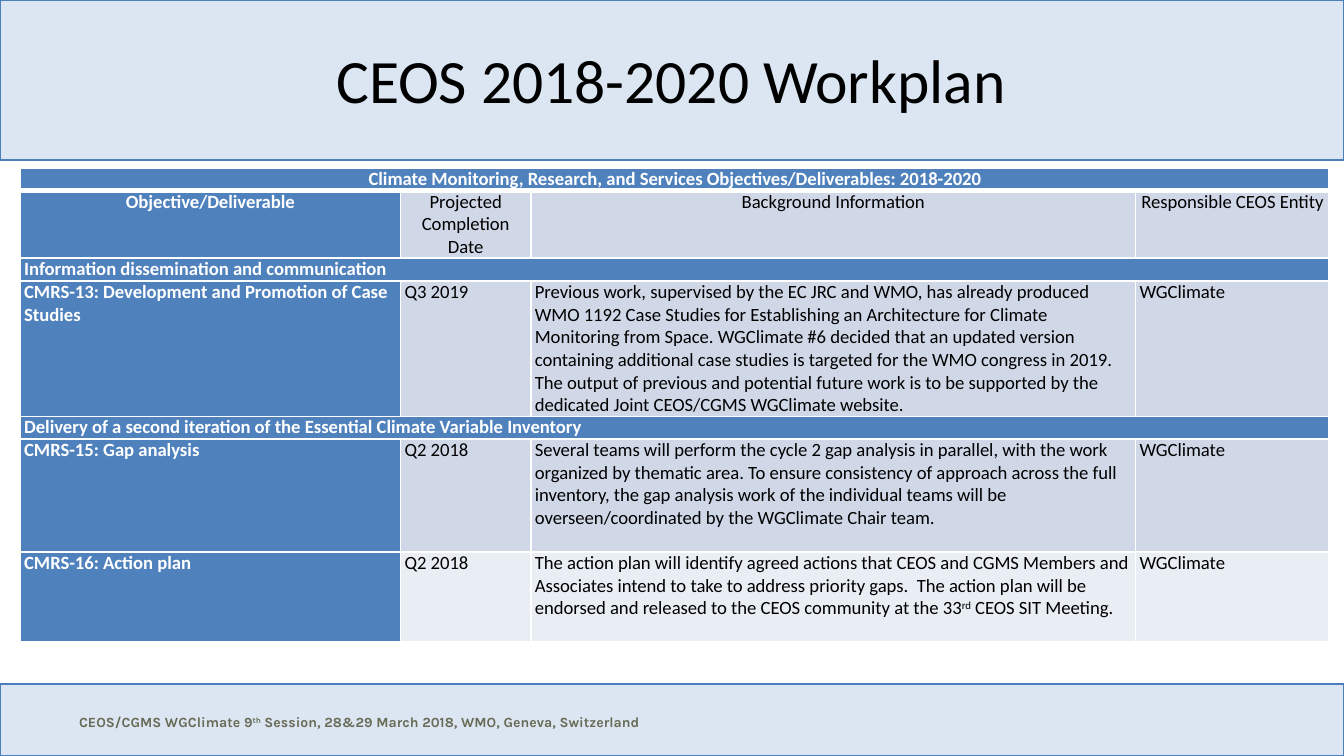
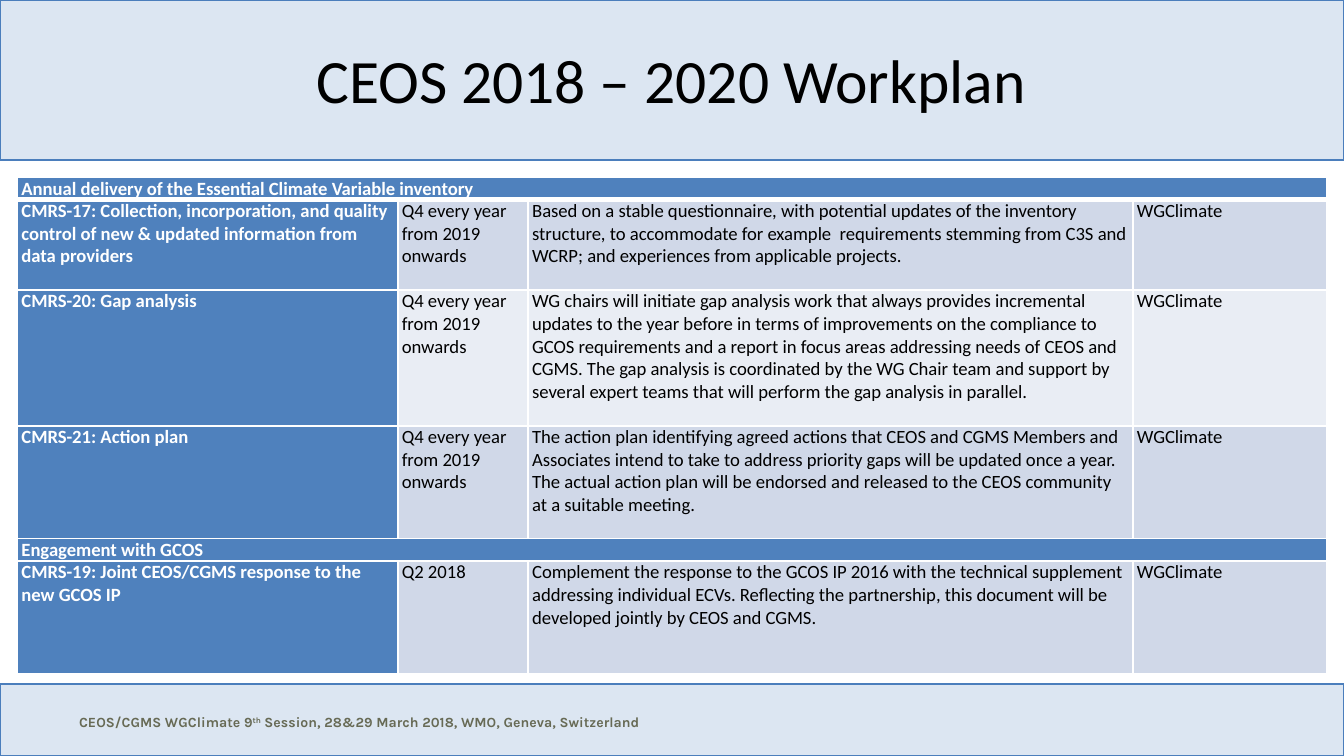
"""Build the two CEOS workplan slides with their shared bands, footer and tables."""
from lxml import etree
from pptx import Presentation
from pptx import util as u
from pptx.dml.color import RGBColor
from pptx.enum import shapes, text
from pptx.oxml import ns

COLORS = {
    "band": "DCE6F2", "band_line": "4B7EBC", "footer": "676A55",
    "black": "000000", "white": "FFFFFF", "head": "4F81BD",
    "odd_row": "D0D8E8", "even_row": "E9EDF4",
}
BANDS = [(5.09, 0.53), (0, 1.19)]
COLUMNS = [2.83, 0.97, 4.5, 1.44]
LINE_POINTS = 12.1
FOOTER = "CEOS/CGMS WGClimate 9^th^ Session, 28&29 March 2018, WMO, Geneva, Switzerland"
YEARLY = "Q4 every year from 2019 onwards"
GROUP = "WGClimate"

SLIDES = [
    {
        "title": "CEOS 2018-2020 Workplan",
        "corner": (0.15, 1.25),
        "centred_rows": 2,
        "rows": [
            (1, ["Climate Monitoring, Research, and Services Objectives/Deliverables: 2018-2020"]),
            (3, ["Objective/Deliverable", "Projected Completion Date",
                 "Background Information", "Responsible CEOS Entity"]),
            (1, ["Information dissemination and communication"]),
            (6, ["CMRS-13: Development and Promotion of Case Studies", "Q3 2019",
                 "Previous work, supervised by the EC JRC and WMO, has already produced "
                 "WMO 1192 Case Studies for Establishing an Architecture for Climate "
                 "Monitoring from Space. WGClimate #6 decided that an updated version "
                 "containing additional case studies is targeted for the WMO congress in 2019. "
                 "The output of previous and potential future work is to be supported by the "
                 "dedicated Joint CEOS/CGMS WGClimate website.", GROUP]),
            (1, ["Delivery of a second iteration of the Essential Climate Variable Inventory"]),
            (5, ["CMRS-15: Gap analysis", "Q2 2018",
                 "Several teams will perform the cycle 2 gap analysis in parallel, with the work "
                 "organized by thematic area. To ensure consistency of approach across the full "
                 "inventory, the gap analysis work of the individual teams will be "
                 "overseen/coordinated by the WGClimate Chair team.", GROUP]),
            (4, ["CMRS-16: Action plan", "Q2 2018",
                 "The action plan will identify agreed actions that CEOS and CGMS Members and "
                 "Associates intend to take to address priority gaps.  The action plan will be "
                 "endorsed and released to the CEOS community at the 33^rd^ CEOS SIT Meeting.",
                 GROUP]),
        ],
    },
    {
        "title": "CEOS 2018 – 2020 Workplan",
        "corner": (0.13, 1.32),
        "centred_rows": 0,
        "rows": [
            (1, ["Annual delivery of the Essential Climate Variable inventory"]),
            (4, ["CMRS-17: Collection, incorporation, and quality control of new & updated "
                 "information from data providers", YEARLY,
                 "Based on a stable questionnaire, with potential updates of the inventory "
                 "structure, to accommodate for example  requirements stemming from C3S and "
                 "WCRP; and experiences from applicable projects.", GROUP]),
            (6, ["CMRS-20: Gap analysis", YEARLY,
                 "WG chairs will initiate gap analysis work that always provides incremental "
                 "updates to the year before in terms of improvements on the compliance to "
                 "GCOS requirements and a report in focus areas addressing needs of CEOS and "
                 "CGMS. The gap analysis is coordinated by the WG Chair team and support by "
                 "several expert teams that will perform the gap analysis in parallel.", GROUP]),
            (5, ["CMRS-21: Action plan", YEARLY,
                 "The action plan identifying agreed actions that CEOS and CGMS Members and "
                 "Associates intend to take to address priority gaps will be updated once a year. "
                 "The actual action plan will be endorsed and released to the CEOS community "
                 "at a suitable meeting.", GROUP]),
            (1, ["Engagement with GCOS"]),
            (5, ["CMRS-19: Joint CEOS/CGMS response to the new GCOS IP", "Q2 2018",
                 "Complement the response to the GCOS IP 2016 with the technical supplement "
                 "addressing individual ECVs. Reflecting the partnership, this document will be "
                 "developed jointly by CEOS and CGMS.", GROUP]),
        ],
    },
]


def write(para, words, size, font, color, bold=False, align=text.PP_ALIGN.LEFT):
    para.alignment = align
    for index, piece in enumerate(words.split("^")):
        span = para.add_run()
        span.text = piece
        span.font.size = u.Pt(size)
        span.font.name = font
        span.font.bold = bold
        span.font.color.rgb = RGBColor.from_string(COLORS[color])
        if index % 2:
            span.font._element.set("baseline", "30000")


def add_borders(cell, top, bottom):
    properties = cell._tc.get_or_add_tcPr()
    for side, width in (("L", 1), ("R", 1), ("T", top), ("B", bottom)):
        line = etree.SubElement(properties, ns.qn("a:ln" + side), w=str(u.Pt(width)))
        fill = etree.SubElement(line, ns.qn("a:solidFill"))
        etree.SubElement(fill, ns.qn("a:srgbClr"), val=COLORS["white"])


deck = Presentation()
deck.slide_width = u.Inches(10)
deck.slide_height = u.Inches(10 * 9 / 16)

for content in SLIDES:
    page = deck.slides.add_slide(deck.slide_layouts[6])

    for top, height in BANDS:
        band = page.shapes.add_shape(shapes.MSO_SHAPE.RECTANGLE, 0, u.Inches(top),
                                     deck.slide_width, u.Inches(height))
        band.shadow.inherit = False
        band.fill.solid()
        band.fill.fore_color.rgb = RGBColor.from_string(COLORS["band"])
        band.line.color.rgb = RGBColor.from_string(COLORS["band_line"])
        band.line.width = u.Pt(0.75)

    footer = page.shapes.add_textbox(u.Inches(0.49), u.Inches(5.26),
                                     u.Inches(6.59), u.Inches(0.23)).text_frame
    footer.word_wrap = True
    footer.auto_size = text.MSO_AUTO_SIZE.SHAPE_TO_FIT_TEXT
    write(footer.paragraphs[0], FOOTER, 7.5, "Karla", "footer", bold=True)

    title = page.shapes.add_textbox(u.Inches(1.58), u.Inches(0.12),
                                    u.Inches(6.83), u.Inches(0.94)).text_frame
    title.word_wrap = True
    title.vertical_anchor = text.MSO_ANCHOR.MIDDLE
    write(title.paragraphs[0], content["title"], 33, "Calibri", "black",
          align=text.PP_ALIGN.CENTER)

    rows = content["rows"]
    left, top = content["corner"]
    height = u.Pt(LINE_POINTS * sum(lines for lines, _ in rows))
    table = page.shapes.add_table(len(rows), len(COLUMNS), u.Inches(left), u.Inches(top),
                                  u.Inches(sum(COLUMNS)), height).table
    for column, width in zip(table.columns, COLUMNS):
        column.width = u.Inches(width)

    for row_index, (lines, entries) in enumerate(rows):
        table.rows[row_index].height = u.Pt(LINE_POINTS * lines)
        centred = row_index < content["centred_rows"]
        align = text.PP_ALIGN.CENTER if centred else text.PP_ALIGN.LEFT
        is_section = len(entries) == 1
        for column_index in range(len(COLUMNS)):
            cell = table.cell(row_index, column_index)
            is_head = is_section or column_index == 0
            row_fill = "odd_row" if row_index % 2 else "even_row"
            add_borders(cell, 3 if row_index == 1 else 1, 3 if row_index == 0 else 1)
            cell.fill.solid()
            cell.fill.fore_color.rgb = RGBColor.from_string(COLORS["head" if is_head else row_fill])
            cell.margin_left = cell.margin_right = u.Inches(0.03)
            cell.margin_top = cell.margin_bottom = 0
            if column_index < len(entries):
                write(cell.text_frame.paragraphs[0], entries[column_index], 10, "Calibri",
                      "white" if is_head else "black", is_head, align)
        if is_section:
            table.cell(row_index, 0).merge(table.cell(row_index, len(COLUMNS) - 1))

deck.save("out.pptx")
